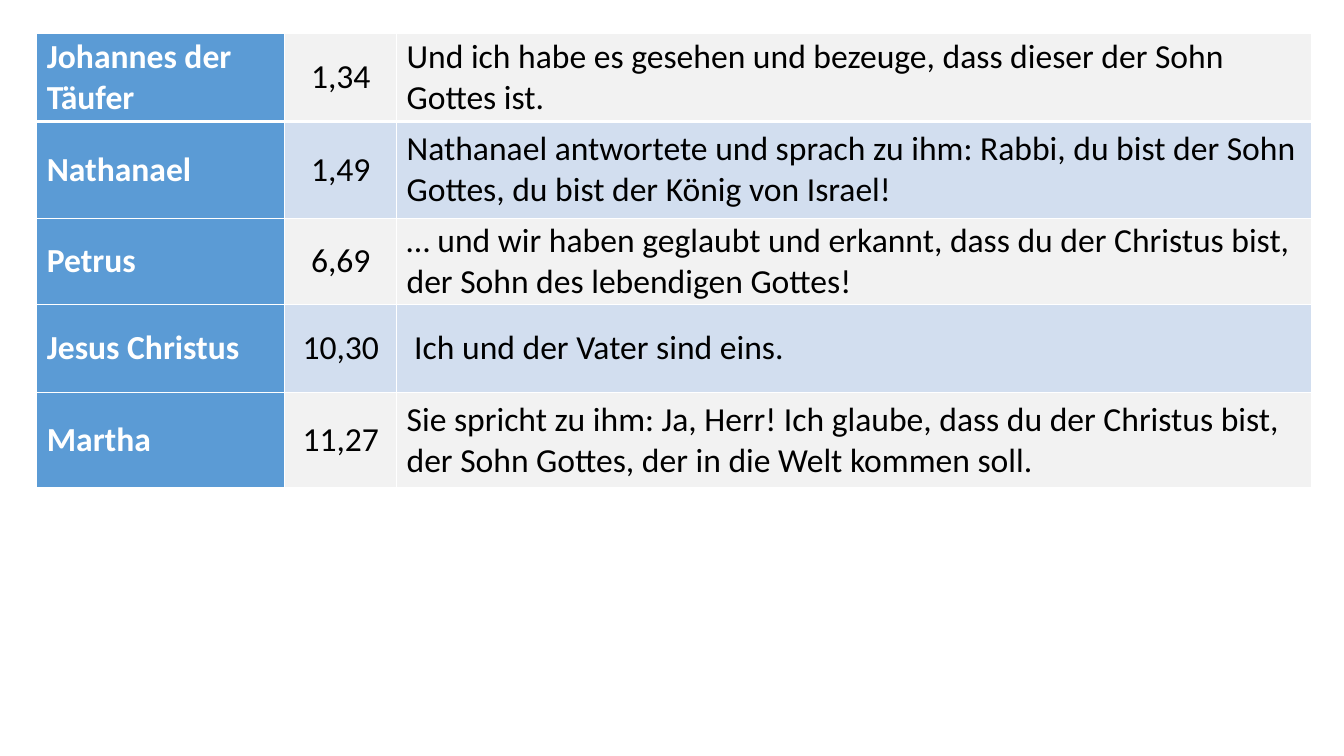
from lxml.etree import SubElement
from pptx import Presentation
from pptx.dml.color import RGBColor
from pptx.enum.text import MSO_ANCHOR, PP_ALIGN
from pptx.oxml.ns import qn
from pptx.util import Cm, Pt

WHITE = RGBColor(0xFF, 0xFF, 0xFF)
BLACK = RGBColor(0x00, 0x00, 0x00)
BLUE = RGBColor(0x5B, 0x9B, 0xD5)
PALE_BLUE = RGBColor(0xD2, 0xDE, 0xEF)
PALE_GREY = RGBColor(0xF2, 0xF2, 0xF2)

COL_WIDTHS = (6.25, 2.82, 23.06)
ROW_HEIGHTS = (2.21, 2.44, 2.18, 2.21, 2.41)
WITNESSES = (
    ("Johannes der Täufer", "1,34",
     "Und ich habe es gesehen und bezeuge, dass dieser der Sohn Gottes ist."),
    ("Nathanael", "1,49",
     "Nathanael antwortete und sprach zu ihm: Rabbi, du bist der Sohn Gottes, "
     "du bist der König von Israel!"),
    ("Petrus", "6,69",
     "… und wir haben geglaubt und erkannt, dass du der Christus bist, "
     "der Sohn des lebendigen Gottes!"),
    ("Jesus Christus", "10,30", " Ich und der Vater sind eins."),
    ("Martha", "11,27",
     "Sie spricht zu ihm: Ja, Herr! Ich glaube, dass du der Christus bist, "
     "der Sohn Gottes, der in die Welt kommen soll."),
)


def write_text(tf, text, size=24, color=BLACK, bold=False, align=PP_ALIGN.LEFT):
    """Write one formatted paragraph into a text frame."""
    p = tf.paragraphs[0]
    p.alignment = align
    r = p.add_run()
    r.text = text
    r.font.name = "Calibri"
    r.font.size = Pt(size)
    r.font.bold = bold
    r.font.color.rgb = color


def set_borders(cell, top=1, bottom=1):
    """Give a cell white borders with widths in points."""
    tc_pr = cell._tc.get_or_add_tcPr()
    for side, width in (("L", 1), ("R", 1), ("T", top), ("B", bottom)):
        ln = SubElement(tc_pr, qn(f"a:ln{side}"), w=str(Pt(width)))
        fill = SubElement(ln, qn("a:solidFill"))
        SubElement(fill, qn("a:srgbClr"), val=str(WHITE))


def format_cell(cell, fill, **borders):
    """Set the borders, fill, margins and anchor of a cell."""
    set_borders(cell, **borders)
    cell.fill.solid()
    cell.fill.fore_color.rgb = fill
    cell.margin_left = cell.margin_right = Cm(0.25)
    cell.margin_top = cell.margin_bottom = 0
    cell.vertical_anchor = MSO_ANCHOR.MIDDLE


def add_witness_table(s, left, top, width, height):
    """Add the table of witnesses, verses and quotations in the given box."""
    table = s.shapes.add_table(len(WITNESSES), len(COL_WIDTHS),
                               left, top, width, height).table
    for col, share in zip(table.columns, COL_WIDTHS):
        col.width = int(width * share / sum(COL_WIDTHS))
    for row, share in zip(table.rows, ROW_HEIGHTS):
        row.height = int(height * share / sum(ROW_HEIGHTS))
    styles = (
        {"color": WHITE, "bold": True},
        {"align": PP_ALIGN.CENTER},
        {},
    )
    for i, texts in enumerate(WITNESSES):
        band = PALE_BLUE if i % 2 else PALE_GREY
        borders = {0: {"bottom": 3}, 1: {"top": 3}}.get(i, {})
        for j, (text, style) in enumerate(zip(texts, styles)):
            cell = table.cell(i, j)
            format_cell(cell, band if j else BLUE, **borders)
            write_text(cell.text_frame, text, **style)


def main():
    """Build the slide and save the presentation."""
    prs = Presentation()
    prs.slide_width, prs.slide_height = Cm(33.87), Cm(19.05)
    s = prs.slides.add_slide(prs.slide_layouts[6])
    add_witness_table(s, Cm(0.93), Cm(0.85),
                      Cm(sum(COL_WIDTHS)), Cm(sum(ROW_HEIGHTS)))
    prs.save("out.pptx")


if __name__ == "__main__":
    main()
